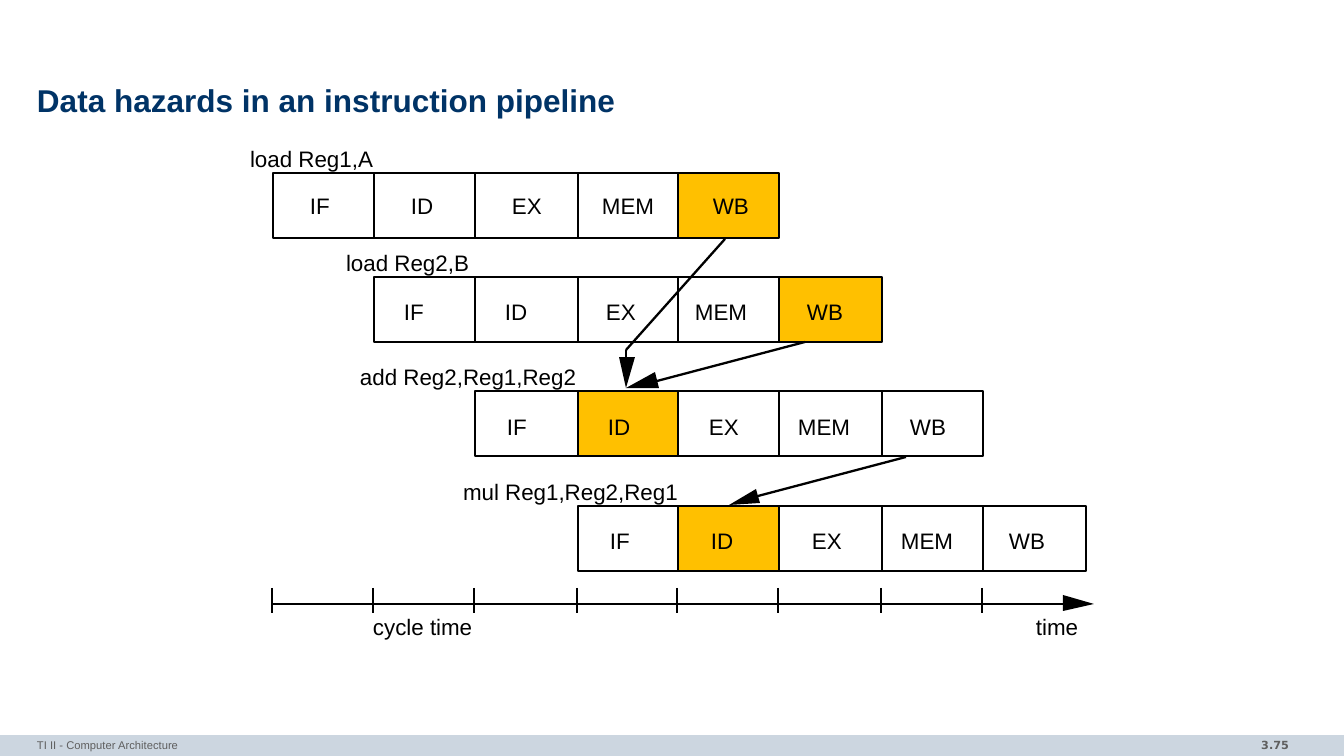
import lxml.etree
import pptx
import pptx.dml.color
import pptx.enum.shapes
import pptx.enum.text
import pptx.oxml.ns
import pptx.util

PX = 914400 / 100.8
COLORS = {"black": "000000", "white": "FFFFFF", "hazard": "FFC000",
          "title": "003366", "bar": "CCD6E0", "footer": "5F5F5F"}
COLORS = {name: pptx.dml.color.RGBColor.from_string(value) for name, value in COLORS.items()}
LINE_WIDTH = pptx.util.Pt(1.63)
ALIGN = pptx.enum.text.PP_ALIGN
RECTANGLE = pptx.enum.shapes.MSO_SHAPE.RECTANGLE

deck = pptx.Presentation()
deck.slide_width, deck.slide_height = round(1344 * PX), round(756 * PX)
page = deck.slides.add_slide(deck.slide_layouts[5])


def write(box, text, size, color, font="Arial", bold=False, align=ALIGN.LEFT):
    frame = box.text_frame
    frame.word_wrap = True
    frame.margin_left = frame.margin_right = frame.margin_top = frame.margin_bottom = 0
    para = frame.paragraphs[0]
    para.alignment = align
    span = para.add_run()
    span.text = text
    span.font.name, span.font.size, span.font.bold = font, pptx.util.Pt(size), bold
    span.font.color.rgb = COLORS[color]
    return frame


def draw_line(*ends):
    line = page.shapes.add_connector(pptx.enum.shapes.MSO_CONNECTOR.STRAIGHT,
                                     *[round(end * PX) for end in ends])
    line.line.color.rgb = COLORS["black"]
    line.line.width = LINE_WIDTH
    lxml.etree.SubElement(line._element.spPr, pptx.oxml.ns.qn("a:effectLst"))


# Title
title = page.shapes.title
title.left, title.top, title.width, title.height = [round(v * PX) for v in (37, 79, 1270, 47)]
frame = write(title, "Data hazards in an instruction pipeline", 22.5, "title", bold=True)
frame.vertical_anchor = pptx.enum.text.MSO_ANCHOR.MIDDLE
frame.auto_size = pptx.enum.text.MSO_AUTO_SIZE.NONE
frame.paragraphs[0].line_spacing = 0.85

# Footer
bar = page.shapes.add_shape(RECTANGLE, 0, round(735 * PX), deck.slide_width, round(21 * PX))
bar.shadow.inherit = False
bar.fill.solid()
bar.fill.fore_color.rgb = COLORS["bar"]
bar.line.fill.background()
footers = [
    (37, 879, "TI II - Computer Architecture", "Arial", False, ALIGN.LEFT),
    (1119, 170, "3.75", "DejaVu Sans", True, ALIGN.RIGHT),
]
for left, width, text, font, bold, align in footers:
    box = page.shapes.add_textbox(*[round(v * PX) for v in (left, 738, width, 13)])
    write(box, text, 8, "footer", font, bold, align)

# Pipeline rows, each starting one cycle later
edges = [273, 374, 475, 578, 678, 779, 882, 983, 1086]
stages = ["IF", "ID", "EX", "MEM", "WB"]
instructions = [  # text, left, width, row top, stage label top and insets, hazard stage
    ("load Reg1,A", 250, 126, 173, 192, (37, 37, 37, 24, 35), "WB"),
    ("load Reg2,B", 346, 128, 277, 298, (30, 30, 28, 17, 28), "WB"),
    ("add Reg2,Reg1,Reg2", 360, 221, 391, 413, (32, 30, 31, 19, 28), "ID"),
    ("mul Reg1,Reg2,Reg1", 463, 221, 506, 527, (32, 33, 33, 19, 26), "ID"),
]
labels = [("cycle time", 373, 613, 110), ("time", 1036, 613, 60)]
for row, (instruction, left, width, top, label_top, insets, hazard) in enumerate(instructions):
    labels.append((instruction, left, top - 28, width))
    for column, (stage, inset) in enumerate(zip(stages, insets), start=row):
        cell = page.shapes.add_shape(RECTANGLE, *[round(v * PX) for v in (
            edges[column], top, edges[column + 1] - edges[column], 65)])
        cell.shadow.inherit = False
        cell.fill.solid()
        cell.fill.fore_color.rgb = COLORS["hazard" if stage == hazard else "white"]
        cell.line.color.rgb = COLORS["black"]
        cell.line.width = LINE_WIDTH
        labels.append((stage, edges[column] + inset, label_top, 60))

# Stage, instruction and axis labels
for text, left, top, width in labels:
    box = page.shapes.add_textbox(*[round(v * PX) for v in (left, top, width, 27)])
    write(box, text, 16, "black")

# Dependency lines and time axis
for ends in [(725, 239, 626, 350), (626, 350, 626, 357), (805, 342, 657, 381),
             (906, 457, 758, 496), (272, 604, 1063, 604)]:
    draw_line(*ends)
for edge in edges[:-1]:
    draw_line(edge - 1, 588, edge - 1, 613)

# Arrowheads, tip first
for tip, *base in [
    [(626, 388), (619, 357), (635, 357)],
    [(626, 388), (655, 372), (659, 388)],
    [(729, 505), (756, 489), (760, 503)],
    [(1094, 604), (1063, 611), (1063, 595)],
]:
    outline = page.shapes.build_freeform(*tip, scale=PX)
    outline.add_line_segments(base, close=True)
    head = outline.convert_to_shape()
    head.shadow.inherit = False
    head.fill.solid()
    head.fill.fore_color.rgb = COLORS["black"]
    head.line.fill.background()

deck.save("out.pptx")
